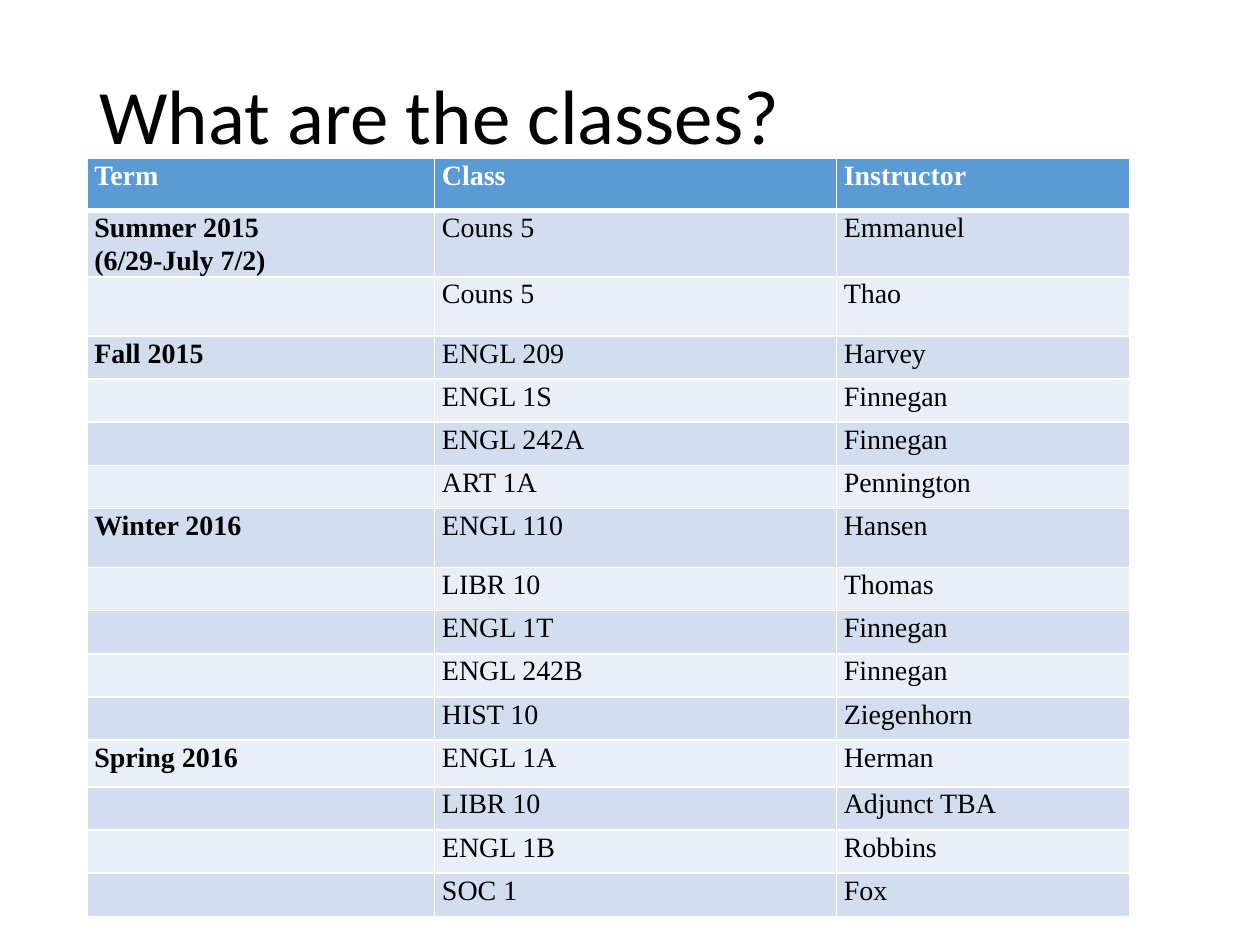
from dataclasses import dataclass

from lxml import etree
from pptx import Presentation
from pptx.dml.color import RGBColor
from pptx.enum.text import MSO_ANCHOR, PP_ALIGN
from pptx.oxml.ns import qn
from pptx.util import Cm, Pt

LEFT = PP_ALIGN.LEFT
TOP = MSO_ANCHOR.TOP
MIDDLE = MSO_ANCHOR.MIDDLE

COLORS = {
    "text": "000000",
    "white": "FFFFFF",
    "header": "5B9BD5",
    "band_dark": "D2DEEF",
    "band_light": "EAEFF7",
}
TITLE_FONT = "Calibri"
TABLE_FONT = "Times New Roman"
COLUMN_WIDTHS = (7.01, 8.1, 5.92)
ROW_HEIGHT = 0.87


@dataclass
class ClassRow:
    term: str
    course: str
    instructor: str
    height: float = ROW_HEIGHT


HEADER = ClassRow("Term", "Class", "Instructor", 1.04)
CLASSES = [
    ClassRow("Summer 2015\n(6/29-July 7/2)", "Couns 5", "Emmanuel", 1.12),
    ClassRow("", "Couns 5", "Thao", 1.19),
    ClassRow("Fall 2015", "ENGL 209", "Harvey"),
    ClassRow("", "ENGL 1S", "Finnegan"),
    ClassRow("", "ENGL 242A", "Finnegan"),
    ClassRow("", "ART 1A", "Pennington"),
    ClassRow("Winter 2016", "ENGL 110", "Hansen", 1.19),
    ClassRow("", "LIBR 10", "Thomas"),
    ClassRow("", "ENGL 1T", "Finnegan"),
    ClassRow("", "ENGL 242B", "Finnegan"),
    ClassRow("", "HIST 10", "Ziegenhorn"),
    ClassRow("Spring 2016", "ENGL 1A", "Herman", 0.94),
    ClassRow("", "LIBR 10", "Adjunct TBA"),
    ClassRow("", "ENGL 1B", "Robbins"),
    ClassRow("", "SOC 1", "Fox"),
]


def rgb(name: str) -> RGBColor:
    return RGBColor.from_string(COLORS[name])


def add_run(p, text: str, font: str, size: float, color: str, bold: bool = False) -> None:
    r = p.add_run()
    r.text = text
    r.font.name = font
    r.font.size = Pt(size)
    r.font.bold = bold
    r.font.color.rgb = rgb(color)


def add_title(s, text: str) -> None:
    sp = s.shapes.title
    sp.left, sp.top, sp.width, sp.height = Cm(1.75), Cm(0.99), Cm(21.89), Cm(2.84)
    tf = sp.text_frame
    tf.vertical_anchor = MIDDLE
    p = tf.paragraphs[0]
    p.alignment = LEFT
    p.line_spacing = 0.9
    add_run(p, text, TITLE_FONT, 44, "text")


def set_borders(cell, top: float, bottom: float) -> None:
    tc_pr = cell._tc.get_or_add_tcPr()
    for side, width in (("L", 1), ("R", 1), ("T", top), ("B", bottom)):
        ln = etree.SubElement(tc_pr, qn(f"a:ln{side}"), w=str(Pt(width)))
        fill = etree.SubElement(ln, qn("a:solidFill"))
        etree.SubElement(fill, qn("a:srgbClr"), val=COLORS["white"])


def fill_cell(cell, text: str, fill: str, color: str, bold: bool) -> None:
    cell.fill.solid()
    cell.fill.fore_color.rgb = rgb(fill)
    cell.margin_left = cell.margin_right = Cm(0.15)
    cell.margin_top = cell.margin_bottom = 0
    cell.vertical_anchor = TOP
    if not text:
        return
    tf = cell.text_frame
    for i, line in enumerate(text.split("\n")):
        p = tf.add_paragraph() if i else tf.paragraphs[0]
        p.line_spacing = 1.07
        add_run(p, line, TABLE_FONT, 16, color, bold)


def add_class_table(s, rows: list[ClassRow]) -> None:
    height = sum(row.height for row in rows)
    table = s.shapes.add_table(
        len(rows), len(COLUMN_WIDTHS), Cm(1.75), Cm(3.2), Cm(sum(COLUMN_WIDTHS)), Cm(height)
    ).table
    for column, width in zip(table.columns, COLUMN_WIDTHS):
        column.width = Cm(width)
    for i, row in enumerate(rows):
        is_header = i == 0
        band = "band_dark" if i % 2 else "band_light"
        table.rows[i].height = Cm(row.height)
        for j, text in enumerate((row.term, row.course, row.instructor)):
            cell = table.cell(i, j)
            set_borders(cell, 3 if i == 1 else 1, 3 if is_header else 1)
            fill_cell(
                cell,
                text,
                "header" if is_header else band,
                "white" if is_header else "text",
                is_header or j == 0,
            )


def main() -> None:
    prs = Presentation()
    prs.slide_width, prs.slide_height = Cm(25.4), Cm(19.05)
    s = prs.slides.add_slide(prs.slide_layouts[5])
    add_title(s, "What are the classes?")
    add_class_table(s, [HEADER, *CLASSES])
    prs.save("out.pptx")


if __name__ == "__main__":
    main()
